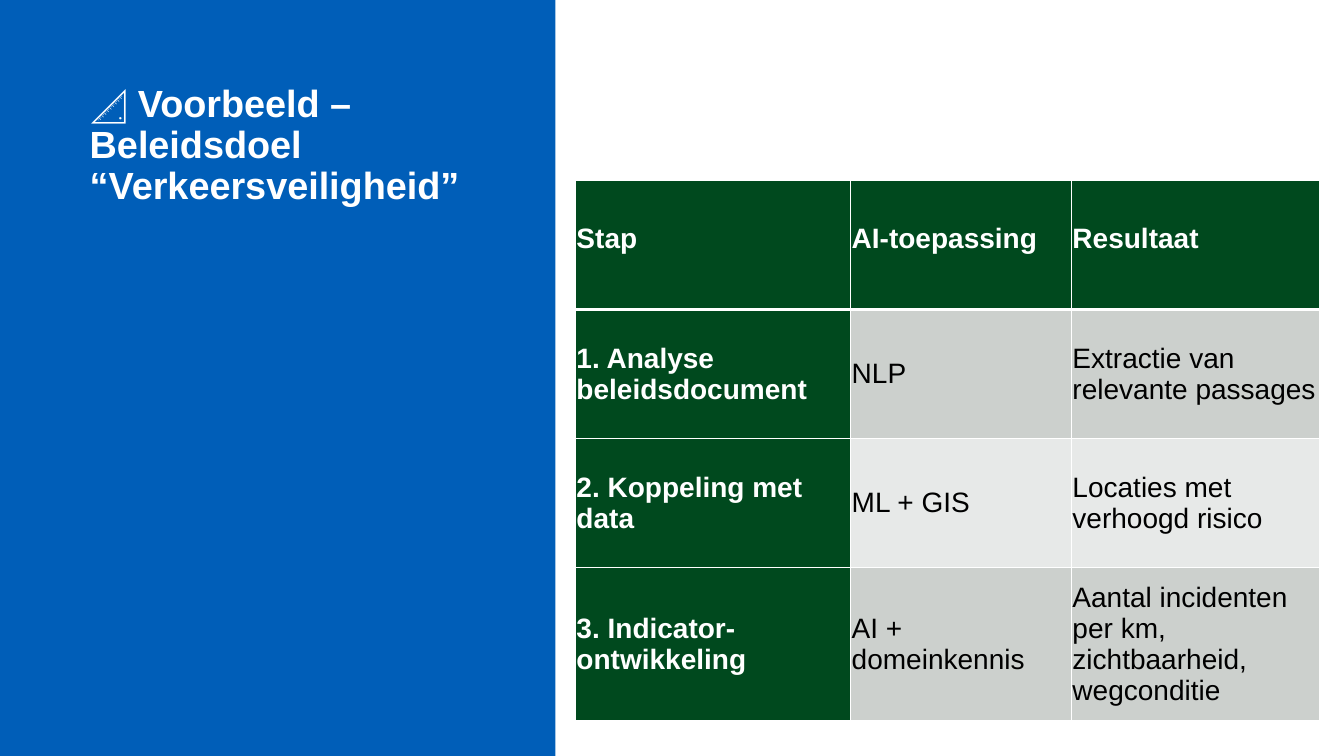
from dataclasses import dataclass

from lxml import etree
from pptx import Presentation
from pptx import util as u
from pptx.dml import color
from pptx.enum import shapes, text
from pptx.oxml import ns


@dataclass(frozen=True)
class Theme:
    font: str = "Arial"
    blue: str = "005EB8"
    green: str = "00491E"
    white: str = "FFFFFF"
    black: str = "000000"
    bands: tuple = ("CCD0CD", "E7E9E8")
    head: int = 27
    body: int = 20
    thin: int = 1
    thick: int = 3


THEME = Theme()
TITLE = "📐 Voorbeeld – Beleidsdoel “Verkeersveiligheid”"
STEPS = [
    ["Stap", "AI-toepassing", "Resultaat"],
    ["1. Analyse beleidsdocument", "NLP", "Extractie van relevante passages"],
    ["2. Koppeling met data", "ML + GIS", "Locaties met verhoogd risico"],
    ["3. Indicator-ontwikkeling", "AI + domeinkennis",
     "Aantal incidenten per km, zichtbaarheid, wegconditie"],
]
WIDTHS = [196.6, 157.7, 177.1]
HEIGHTS = [92.2, 92.2, 92.2, 109.4]


def paint(fill, hue):
    fill.solid()
    fill.fore_color.rgb = color.RGBColor.from_string(hue)


def style(para, size, hue, bold):
    para.alignment = text.PP_ALIGN.LEFT
    for run in para.runs:
        run.font.name = THEME.font
        run.font.size = u.Pt(size)
        run.font.bold = bold
        run.font.color.rgb = color.RGBColor.from_string(hue)


def edge(cell, side, width):
    props = cell._tc.get_or_add_tcPr()
    line = etree.SubElement(props, ns.qn(f"a:ln{side}"), w=str(u.Pt(width)))
    solid = etree.SubElement(line, ns.qn("a:solidFill"))
    etree.SubElement(solid, ns.qn("a:srgbClr"), val=THEME.white)


def add_panel(slide, left, top, width, height):
    panel = slide.shapes.add_shape(
        shapes.MSO_SHAPE.RECTANGLE,
        u.Pt(left), u.Pt(top), u.Pt(width), u.Pt(height))
    panel.shadow.inherit = False
    paint(panel.fill, THEME.blue)
    panel.line.fill.background()

    title = slide.shapes.title
    title.element.addprevious(panel.element)
    pad = 56.9
    title.left, title.top = u.Pt(left + pad), u.Pt(top + pad)
    title.width, title.height = u.Pt(width - 2 * pad - 2.1), u.Pt(104.4)
    frame = title.text_frame
    frame.text = TITLE
    frame.word_wrap = True
    frame.auto_size = text.MSO_AUTO_SIZE.NONE
    frame.vertical_anchor = text.MSO_ANCHOR.TOP
    para = frame.paragraphs[0]
    para.line_spacing = 0.9
    style(para, THEME.head, THEME.white, True)


def fill_cell(cell, words, row, col):
    label = row == 0 or col == 0
    edge(cell, "L", THEME.thin)
    edge(cell, "R", THEME.thin)
    edge(cell, "T", THEME.thick if row == 1 else THEME.thin)
    edge(cell, "B", THEME.thick if row == 0 else THEME.thin)
    paint(cell.fill, THEME.green if label else THEME.bands[(row - 1) % 2])
    cell.margin_left = cell.margin_right = u.Pt(0.7)
    cell.margin_top = cell.margin_bottom = u.Pt(0.7)
    cell.vertical_anchor = text.MSO_ANCHOR.MIDDLE
    cell.text_frame.text = words
    para = cell.text_frame.paragraphs[0]
    if row == 0:
        para.line_spacing = u.Pt(13)
    style(para, THEME.body, THEME.white if label else THEME.black, label)


def add_steps(slide, left, top, width, height):
    table = slide.shapes.add_table(
        len(STEPS), len(WIDTHS),
        u.Pt(left), u.Pt(top), u.Pt(width), u.Pt(height)).table
    table.first_col = True
    for column, size in zip(table.columns, WIDTHS):
        column.width = u.Pt(size)
    for line, size in zip(table.rows, HEIGHTS):
        line.height = u.Pt(size)
    for row, line in enumerate(STEPS):
        for col, words in enumerate(line):
            fill_cell(table.cell(row, col), words, row, col)


def main():
    deck = Presentation()
    deck.slide_width, deck.slide_height = u.Pt(960), u.Pt(540)
    slide = deck.slides.add_slide(deck.slide_layouts[5])
    add_panel(slide, 0, 0, 396.7, 540)
    add_steps(slide, 411.1, 128.9, sum(WIDTHS), sum(HEIGHTS))
    deck.save("out.pptx")


if __name__ == "__main__":
    main()
